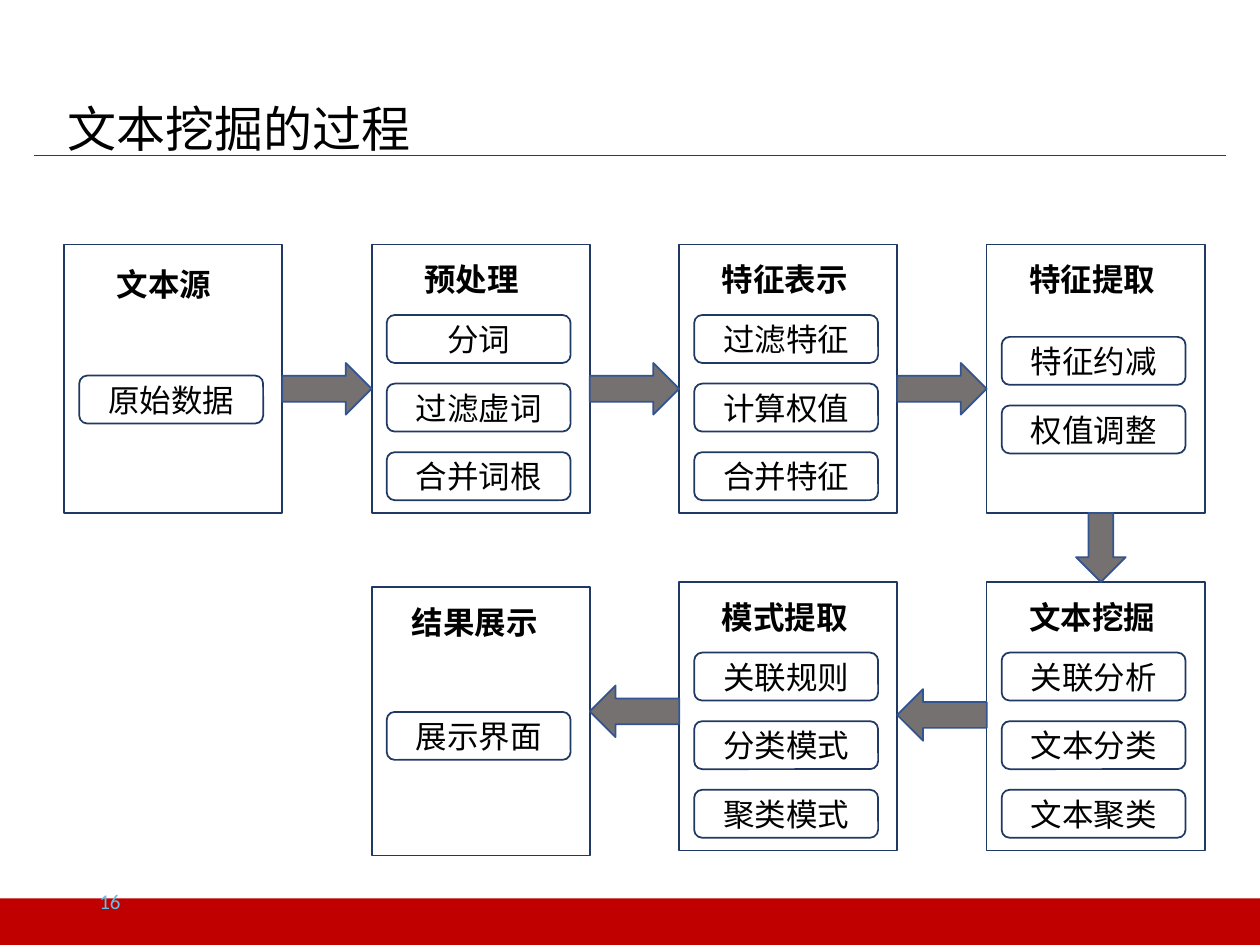
import pptx
import pptx.dml.color
import pptx.enum.shapes
import pptx.enum.text
import pptx.oxml.ns
import lxml.etree
from pptx.util import Pt

SHAPE = pptx.enum.shapes.MSO_SHAPE
ALIGN = pptx.enum.text.PP_ALIGN
ANCHOR = pptx.enum.text.MSO_ANCHOR
CJK = "Noto Sans CJK SC"
RED, NAVY, WHITE = "C00000", "203864", "FFFFFF"

COLUMN_LEFT, COLUMN_PITCH = 36.7, 175.7
STAGE_WIDTH, STAGE_HEIGHT = 124.6, 153.4
STEP_PITCH = 39.2
TOP_ROW, BOTTOM_ROW, RESULT_ROW = 139.7, 332.6, 335.5

# column, top, title, title offset (x, y), offset of first step, steps
STAGES = [
    (0, TOP_ROW, "文本源", (23, 7.9), 74.9, ["原始数据"]),
    (1, TOP_ROW, "预处理", (23, 5.4), 40.3, ["分词", "过滤虚词", "合并词根"]),
    (2, TOP_ROW, "特征表示", (17.3, 5.4), 40.3, ["过滤特征", "计算权值", "合并特征"]),
    (3, TOP_ROW, "特征提取", (17.3, 5.4), 52.8, ["特征约减", "权值调整"]),
    (3, BOTTOM_ROW, "文本挖掘", (17.3, 5.4), 40.3, ["关联分析", "文本分类", "文本聚类"]),
    (2, BOTTOM_ROW, "模式提取", (17.3, 5.4), 40.3, ["关联规则", "分类模式", "聚类模式"]),
    (1, RESULT_ROW, "结果展示", (15.8, 5.4), 71.3, ["展示界面"]),
]
# gap after column, top, rotation
SIDE_ARROWS = [
    (0, 207.4, 0), (1, 207.4, 0), (2, 207.4, 0),
    (2, 393.8, 180), (1, 391.7, 180),
]


def color(value):
    return pptx.dml.color.RGBColor.from_string(value)


def column_left(column):
    return COLUMN_LEFT + column * COLUMN_PITCH


def write(shape, text, size=18, font=CJK, fill="000000", bold=False,
          align=ALIGN.LEFT, anchor=ANCHOR.TOP, wrap=True):
    frame = shape.text_frame
    frame.word_wrap = wrap
    frame.vertical_anchor = anchor
    para = frame.paragraphs[0]
    para.alignment = align
    span = para.add_run()
    span.text = text
    span.font.size = Pt(size)
    span.font.bold = bold
    span.font.name = font
    span.font.color.rgb = color(fill)
    east_asian = lxml.etree.SubElement(span.font._element, pptx.oxml.ns.qn("a:ea"))
    east_asian.set("typeface", font)


def add_text(page, box, text, **style):
    write(page.shapes.add_textbox(*map(Pt, box)), text, **style)


def add_block(page, kind, box, fill=WHITE, line=None):
    block = page.shapes.add_shape(kind, *map(Pt, box))
    block.shadow.inherit = False
    block.fill.solid()
    block.fill.fore_color.rgb = color(fill)
    if line:
        block.line.color.rgb = color(line)
        block.line.width = Pt(1)
    else:
        block.line.fill.background()
    return block


def add_arrow(page, kind, box, rotation=0):
    add_block(page, kind, box, "767171", "325491").rotation = rotation


def add_stage(page, box, title, title_offset, first_step, steps):
    """A framed stage with a bold title above a column of rounded steps."""
    left, top, _, _ = box
    add_block(page, SHAPE.RECTANGLE, box, line=NAVY)
    add_text(page, (left + title_offset[0], top + title_offset[1], 90.7, 29), title, bold=True)
    for index, step in enumerate(steps):
        step_box = (left + 8.6, top + first_step + index * STEP_PITCH, 105.1, 27.4)
        block = add_block(page, SHAPE.ROUNDED_RECTANGLE, step_box, line=NAVY)
        write(block, step, align=ALIGN.CENTER, anchor=ANCHOR.MIDDLE)


def add_header(page, box):
    left, top, width, height = box
    bottom = top + height
    rule = page.shapes.add_connector(
        pptx.enum.shapes.MSO_CONNECTOR.STRAIGHT,
        Pt(left), Pt(bottom), Pt(left + width), Pt(bottom))
    rule.line.color.rgb = color(RED)
    rule.line.width = Pt(0.5)
    lxml.etree.SubElement(rule._element.spPr, pptx.oxml.ns.qn("a:effectLst"))
    add_text(page, (left + 12.2, top, 212.4, 41), "文本挖掘的过程", size=28, wrap=False)


def add_footer(page, box):
    add_block(page, SHAPE.RECTANGLE, box, RED)
    add_text(page, (49.7, box[1] - 13, 162, 28.8), "16", size=12, font="Calibri",
             fill="5EC3EB", anchor=ANCHOR.MIDDLE)


def add_process(page):
    for column, top, *content in STAGES:
        add_stage(page, (column_left(column), top, STAGE_WIDTH, STAGE_HEIGHT), *content)
    for column, top, rotation in SIDE_ARROWS:
        box = (column_left(column) + STAGE_WIDTH, top, COLUMN_PITCH - STAGE_WIDTH, 29.5)
        add_arrow(page, SHAPE.RIGHT_ARROW, box, rotation)
    stage_bottom = TOP_ROW + STAGE_HEIGHT
    add_arrow(page, SHAPE.DOWN_ARROW,
              (614.9, stage_bottom, 28.4, BOTTOM_ROW - stage_bottom))


def main():
    deck = pptx.Presentation()
    deck.slide_width, deck.slide_height = Pt(720), Pt(540)
    page = deck.slides.add_slide(deck.slide_layouts[6])
    add_footer(page, (-2.2, 513.4, 723, 28.8))
    add_header(page, (19.4, 52.6, 681.2, 36))
    add_process(page)
    deck.save("out.pptx")


if __name__ == "__main__":
    main()
